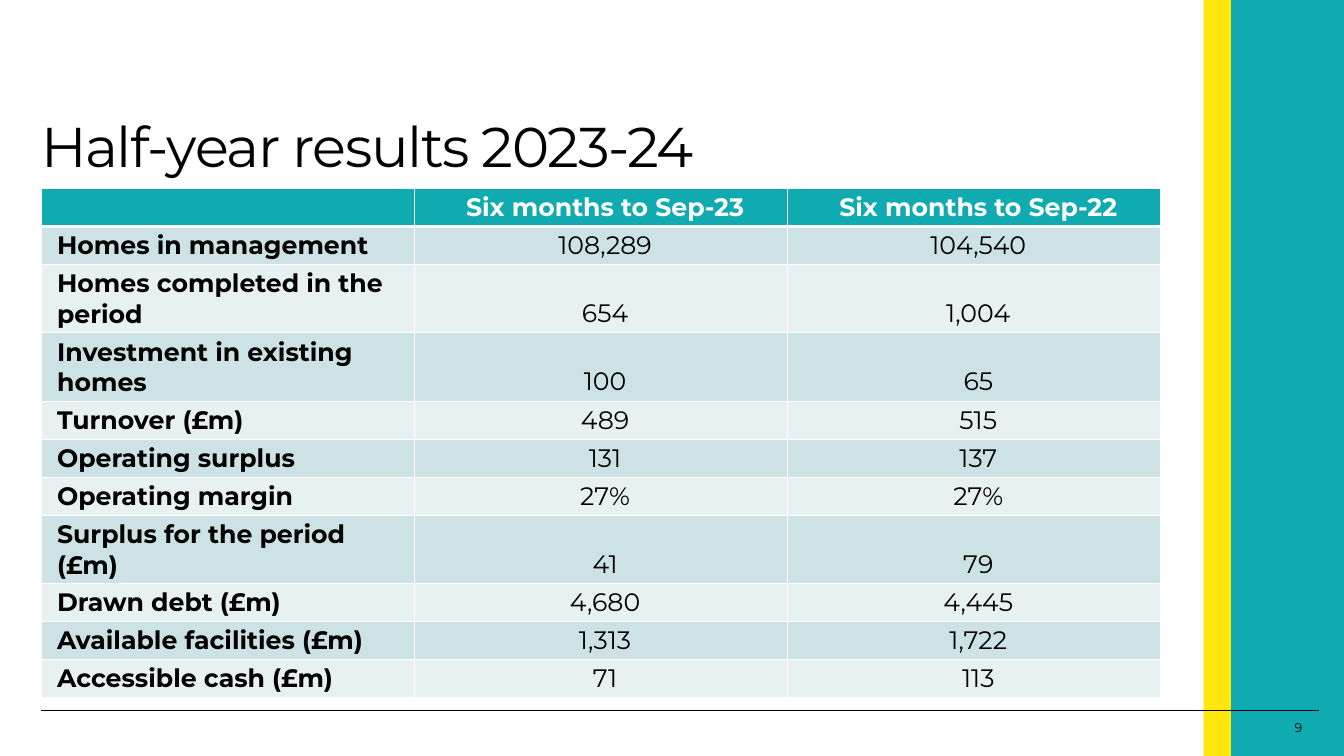
from lxml import etree
from pptx import Presentation
from pptx.dml.color import RGBColor
from pptx.enum.shapes import MSO_CONNECTOR, MSO_SHAPE
from pptx.enum.text import MSO_ANCHOR, PP_ALIGN
from pptx.oxml.ns import qn
from pptx.util import Pt

FONT = "Montserrat"
COLOURS = {
    "teal": "10AAB1",
    "yellow": "FFE70E",
    "dark row": "CCE2E4",
    "light row": "E7F1F2",
    "black": "000000",
    "white": "FFFFFF",
}
RESULTS = [
    ("", "Six months to Sep-23", "Six months to Sep-22"),
    ("Homes in management", "108,289", "104,540"),
    ("Homes completed in the period", "654", "1,004"),
    ("Investment in existing homes", "100", "65"),
    ("Turnover (£m)", "489", "515"),
    ("Operating surplus", "131", "137"),
    ("Operating margin", "27%", "27%"),
    ("Surplus for the period (£m)", "41", "79"),
    ("Drawn debt (£m)", "4,680", "4,445"),
    ("Available facilities (£m)", "1,313", "1,722"),
    ("Accessible cash (£m)", "71", "113"),
]
COLUMN_WIDTH = 266.6
ROW_HEIGHT = 26.2


def colour(name):
    return RGBColor.from_string(COLOURS[name])


def set_font(para, size, colour_name="black", bold=False):
    para.font.name = FONT
    para.font.size = Pt(size)
    para.font.bold = bold
    para.font.color.rgb = colour(colour_name)


def add_band(page, left, width, fill):
    """Add a full-height vertical stripe."""
    band = page.shapes.add_shape(
        MSO_SHAPE.RECTANGLE, Pt(left), Pt(0), Pt(width), Pt(540))
    band.shadow.inherit = False
    band.fill.solid()
    band.fill.fore_color.rgb = colour(fill)
    band.line.fill.background()


def add_rule(page, left, right, top):
    rule = page.shapes.add_connector(
        MSO_CONNECTOR.STRAIGHT, Pt(left), Pt(top), Pt(right), Pt(top))
    rule.line.color.rgb = colour("black")
    rule.line.width = Pt(0.5)
    etree.SubElement(rule._element.spPr, qn("a:effectLst"))


def add_text(page, text, left, top, width, height, size, align=PP_ALIGN.LEFT):
    box = page.shapes.add_textbox(Pt(left), Pt(top), Pt(width), Pt(height))
    frame = box.text_frame
    frame.word_wrap = True
    frame.margin_left = frame.margin_right = Pt(0)
    frame.margin_top = frame.margin_bottom = Pt(0)
    para = frame.paragraphs[0]
    para.text = text
    para.alignment = align
    set_font(para, size)
    return para


def add_title(page, text):
    para = add_text(page, text, 29.5, 85.7, 828.7, 48.2, 40)
    para.line_spacing = 0.88
    para.runs[0].font._element.set("spc", "-100")


def set_borders(cell, bottom):
    """Draw white borders, 1 pt except for the given bottom width."""
    properties = cell._tc.get_or_add_tcPr()
    widths = {"lnL": 1, "lnR": 1, "lnT": 1, "lnB": bottom}
    for position, (side, width) in enumerate(widths.items()):
        line = etree.Element(qn(f"a:{side}"), w=str(Pt(width)))
        fill = etree.SubElement(line, qn("a:solidFill"))
        etree.SubElement(fill, qn("a:srgbClr"), val=COLOURS["white"])
        properties.insert(position, line)


def fill_cell(cell, text, row, column):
    header = row == 0
    fill = "teal" if header else "dark row" if row % 2 else "light row"
    cell.fill.solid()
    cell.fill.fore_color.rgb = colour(fill)
    cell.margin_left, cell.margin_right = Pt(11.3), Pt(5.7)
    cell.margin_top = cell.margin_bottom = Pt(2.8)
    cell.vertical_anchor = MSO_ANCHOR.TOP if header else MSO_ANCHOR.BOTTOM
    para = cell.text_frame.paragraphs[0]
    para.text = text
    para.alignment = PP_ALIGN.CENTER if column else PP_ALIGN.LEFT
    set_font(para, 18, "white" if header else "black", header or column == 0)
    set_borders(cell, 3 if header else 1)


def add_results_table(page, left, top):
    rows, columns = len(RESULTS), len(RESULTS[0])
    table = page.shapes.add_table(
        rows, columns, Pt(left), Pt(top),
        Pt(COLUMN_WIDTH * columns), Pt(ROW_HEIGHT * rows)).table
    for column in table.columns:
        column.width = Pt(COLUMN_WIDTH)
    for row, values in enumerate(RESULTS):
        table.rows[row].height = Pt(ROW_HEIGHT)
        for column, text in enumerate(values):
            fill_cell(table.cell(row, column), text, row, column)


def main():
    deck = Presentation()
    deck.slide_width, deck.slide_height = Pt(960), Pt(540)
    page = deck.slides.add_slide(deck.slide_layouts[6])
    add_band(page, 879.2, 80.8, "teal")
    add_band(page, 859.7, 19.5, "yellow")
    add_rule(page, 29.5, 942.5, 507.6)
    add_text(page, "9", 900, 514.1, 30.2, 13.7, 9, PP_ALIGN.RIGHT)
    add_title(page, "Half-year results 2023-24")
    add_results_table(page, 29.5, 134.6)
    deck.save("out.pptx")


if __name__ == "__main__":
    main()
